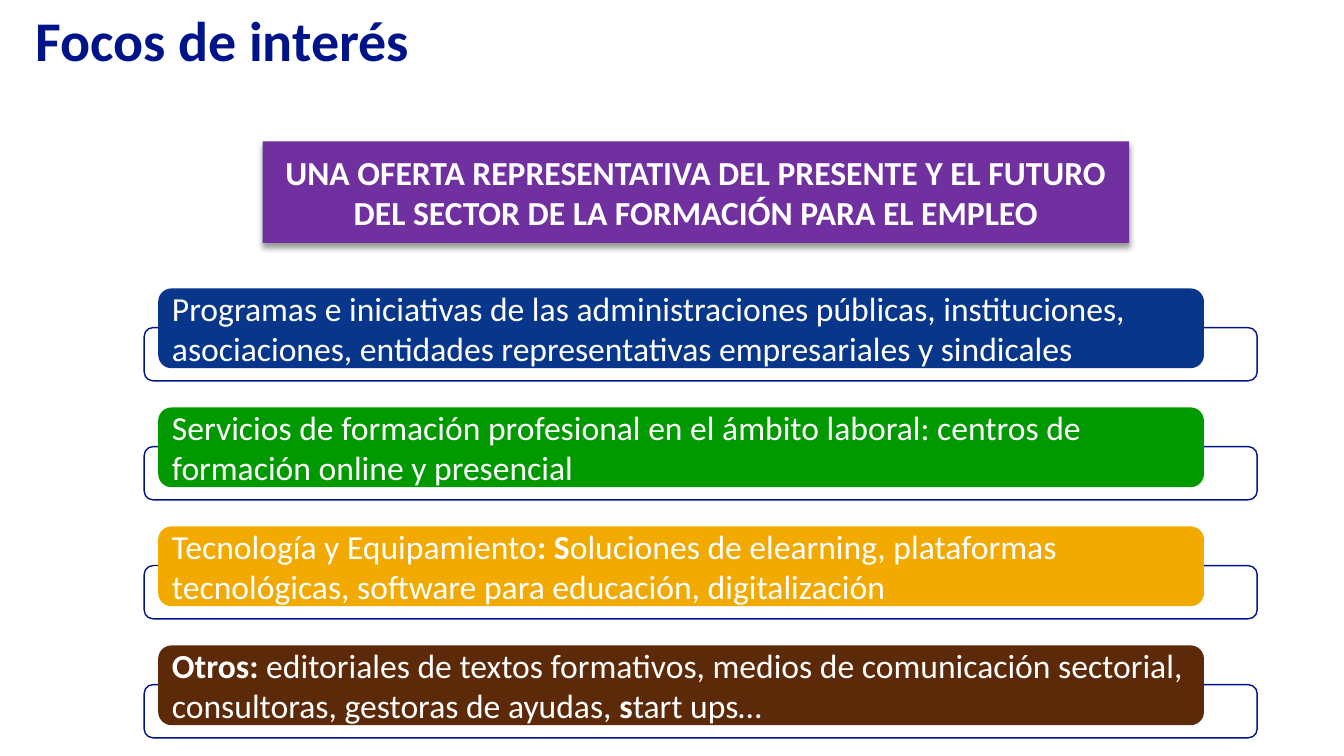
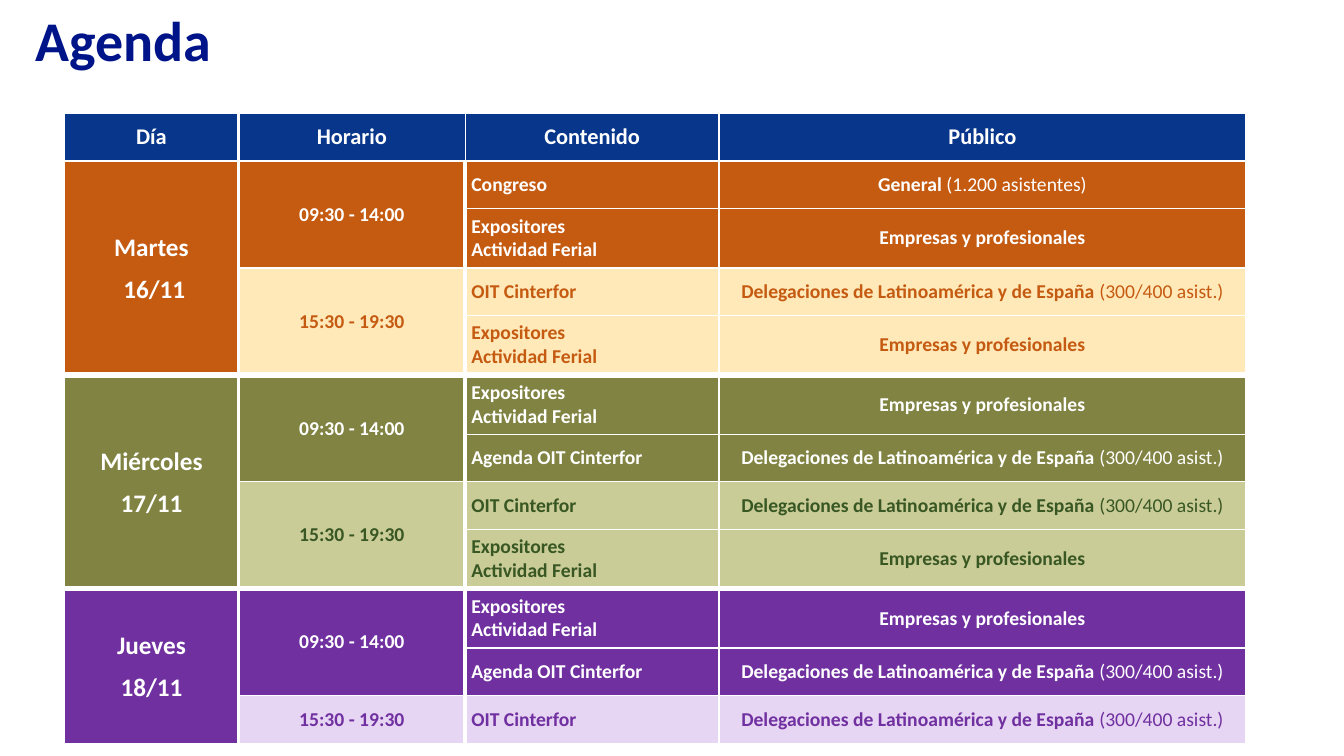
from pptx import Presentation
from pptx.dml.color import RGBColor as RGB
from pptx.enum.shapes import MSO_SHAPE as SHAPE
from pptx.enum.text import MSO_ANCHOR as ANCHOR, MSO_AUTO_SIZE as FIT, PP_ALIGN as ALIGN
from pptx.oxml import parse_xml
from pptx.util import Pt

NS = 'xmlns:a="http://schemas.openxmlformats.org/drawingml/2006/main"'
HUE = {
    "white": "FFFFFF", "navy": "001489", "blue": "07368B", "green": "009900",
    "amber": "F2A900", "brown": "5C2A08", "purple": "7030A0", "lilac": "E6D5F3",
    "rust": "C55A11", "cream": "FFE9B9", "olive": "808341", "sage": "CACC98",
    "moss": "385723",
}


def rgb(name):
    return RGB.from_string(HUE[name])


def write(frame, text, size=24, color="white", bold=False, align=ALIGN.LEFT,
          gap=0, lead=1.0):
    """Lines become paragraphs; each * switches bold on or off."""
    frame.word_wrap = True
    frame.vertical_anchor = ANCHOR.MIDDLE
    for i, line in enumerate(text.split("\n")):
        para = frame.add_paragraph() if i else frame.paragraphs[0]
        para.alignment = align
        para.line_spacing = lead
        para.space_before = Pt(gap if i else 0)
        for j, part in enumerate(line.split("*")):
            if part:
                run = para.add_run()
                run.text = part
                run.font.name = "Calibri"
                run.font.size = Pt(size)
                run.font.bold = bold != (j % 2 == 1)
                run.font.color.rgb = rgb(color)


deck = Presentation()
deck.slide_width, deck.slide_height = Pt(960), Pt(540)

# Shared title place and style
plan = deck.slide_layouts[5]
head = plan.placeholders[0]
head.left, head.top, head.width, head.height = Pt(18), Pt(17.3), Pt(731.5), Pt(28)
slides = []
for name in ("Focos de interés", "Agenda"):
    slide = deck.slides.add_slide(plan)
    frame = slide.shapes.title.text_frame
    frame.auto_size = FIT.NONE
    write(frame, name, size=40, color="navy", bold=True, lead=0.9)
    slides.append(slide)
focus, agenda = slides

# Banner with a soft shadow
box = focus.shapes.add_shape(SHAPE.RECTANGLE, Pt(187.5), Pt(101), Pt(619), Pt(72.5))
box.fill.solid()
box.fill.fore_color.rgb = rgb("purple")
box.line.fill.background()
box.shadow.inherit = False
box._element.spPr.find("{*}effectLst").append(parse_xml(
    f'<a:outerShdw {NS} blurRad="{Pt(4)}" dist="{Pt(3)}" dir="5400000" rotWithShape="0">'
    '<a:srgbClr val="000000"><a:alpha val="40000"/></a:srgbClr></a:outerShdw>'))
write(box.text_frame, "UNA OFERTA REPRESENTATIVA DEL PRESENTE Y EL FUTURO "
      "DEL SECTOR DE LA FORMACIÓN PARA EL EMPLEO", bold=True, align=ALIGN.CENTER)

# Four topics: a coloured bar over an outlined frame
topics = [
    ("blue", "Programas e iniciativas de las administraciones públicas, instituciones, "
     "asociaciones, entidades representativas empresariales y sindicales"),
    ("green", "Servicios de formación profesional en el ámbito laboral: centros de "
     "formación online y presencial"),
    ("amber", "Tecnología y Equipamiento*: S*oluciones de elearning, plataformas "
     "tecnológicas, software para educación, digitalización"),
    ("brown", "*Otros: *editoriales de textos formativos, medios de comunicación "
     "sectorial, consultoras, gestoras de ayudas, *s*tart ups…"),
]
for i, (color, text) in enumerate(topics):
    group = focus.shapes.add_group_shape().shapes
    top = 206 + 85 * i
    rim = group.add_shape(SHAPE.ROUNDED_RECTANGLE, Pt(103), Pt(top + 28), Pt(795), Pt(38))
    rim.fill.background()
    rim.line.color.rgb = rgb("navy")
    rim.line.width = Pt(1)
    bar = group.add_shape(SHAPE.ROUNDED_RECTANGLE, Pt(113), Pt(top), Pt(747), Pt(57))
    bar.fill.solid()
    bar.fill.fore_color.rgb = rgb(color)
    bar.line.fill.background()
    rim.shadow.inherit = bar.shadow.inherit = False
    write(bar.text_frame, text)

# Agenda data: day, dark, light and ink colours, then sessions of (content, public)
SHOW = ("Expositores\nActividad Ferial", "Empresas y profesionales")
GUESTS = "Delegaciones de Latinoamérica y de España *(300/400 asist.)"
OIT = ("OIT Cinterfor", GUESTS)
PLAN = ("Agenda OIT Cinterfor", GUESTS)
TALK = ("Congreso", "General *(1.200 asistentes)")
days = [
    ("Martes\n 16/11", "rust", "cream", "rust", [[TALK, SHOW], [OIT, SHOW]]),
    ("Miércoles\n17/11", "olive", "sage", "moss", [[SHOW, PLAN], [OIT, SHOW]]),
    ("Jueves\n18/11", "purple", "lilac", "purple", [[SHOW, PLAN], [OIT]]),
]
hours = ("09:30 - 14:00", "15:30 - 19:30")

# Lay the cells out as (row, column, span, fill, text, format)
mid = dict(bold=True, align=ALIGN.CENTER)
cells = [(0, c, 1, "blue", text, dict(mid, size=16))
         for c, text in enumerate(("Día", "Horario", "Contenido", "Público"))]
highs, starts = [34], []
for day, dark, light, ink, parts in days:
    first = len(highs)
    starts.append(first)
    for hour, fill, color, rows in zip(hours, (dark, light), ("white", ink), parts):
        look = dict(mid, size=14, color=color)
        cells.append((len(highs), 1, len(rows), fill, hour, look))
        for theme, public in rows:
            row = len(highs)
            cells.append((row, 2, 1, fill, theme, dict(look, align=ALIGN.LEFT)))
            cells.append((row, 3, 1, fill, public, look))
            highs.append(42.4 if "\n" in theme else 34)
    cells.append((first, 0, len(highs) - first, dark, day,
                  dict(mid, size=18, gap=6, lead=1.07)))

# Draw the table
wides = (124.4, 162, 181.2, 376.4)
table = agenda.shapes.add_table(len(highs), len(wides), Pt(46), Pt(81),
                                Pt(sum(wides)), Pt(sum(highs))).table
table.first_row = table.horz_banding = False
for col, wide in zip(table.columns, wides):
    col.width = Pt(wide)
for row, high in zip(table.rows, highs):
    row.height = Pt(high)
for r, c, span, fill, text, look in cells:
    cell = table.cell(r, c)
    if span > 1:
        cell.merge(table.cell(r + span - 1, c))
    for k in range(span):
        tint = table.cell(r + k, c).fill
        tint.solid()
        tint.fore_color.rgb = rgb(fill)
    cell.margin_left = cell.margin_right = Pt(4.3)
    cell.margin_top = cell.margin_bottom = Pt(0.5)
    cell.vertical_anchor = ANCHOR.MIDDLE
    write(cell.text_frame, text, **look)

# White borders, thicker beside the day and time columns and between days
for r in range(len(highs)):
    sides = (1, 3, 3 if r else 1, 1, 1)
    for c in range(len(wides)):
        edges = {"L": sides[c], "R": sides[c + 1],
                 "T": 4.5 if r in starts[1:] else 1,
                 "B": 4.5 if r + 1 in starts[1:] else 1}
        props = table.cell(r, c)._tc.get_or_add_tcPr()
        for k, (side, wide) in enumerate(edges.items()):
            props.insert(k, parse_xml(
                f'<a:ln{side} {NS} w="{Pt(wide)}"><a:solidFill>'
                f'<a:srgbClr val="{HUE["white"]}"/></a:solidFill></a:ln{side}>'))

deck.save("out.pptx")
